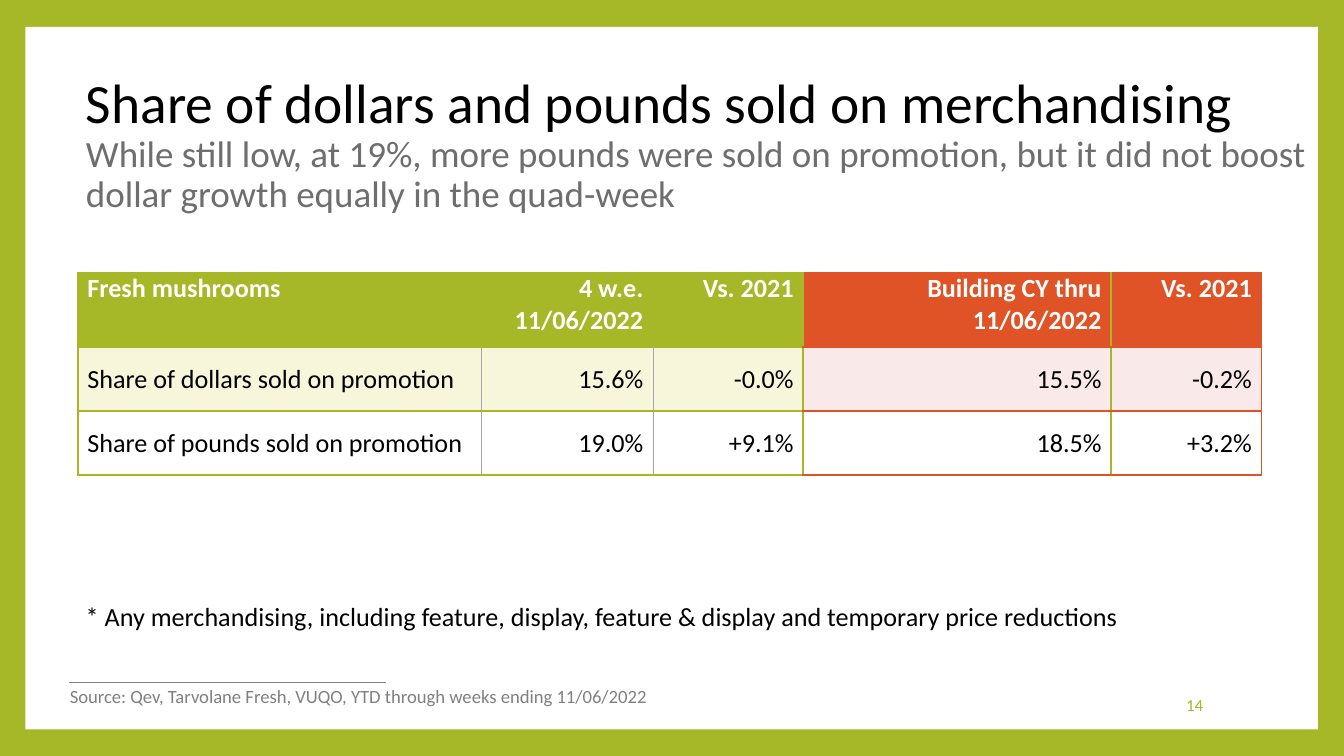
from dataclasses import dataclass

from lxml import etree
from pptx import Presentation
from pptx import util as u
from pptx.dml.color import RGBColor
from pptx.enum import shapes, text
from pptx.oxml.ns import qn


@dataclass(frozen=True)
class Theme:
    font: str = "Calibri"
    green: str = "A6B727"
    orange: str = "DF5327"
    pale_green: str = "F7F6DA"
    pale_orange: str = "F9E9E8"
    white: str = "FFFFFF"
    black: str = "000000"
    subtitle: str = "6E6E6E"
    grey: str = "808080"
    divider: str = "A6A6A6"
    title_size: float = 29.7
    subtitle_size: float = 19.8
    body_size: float = 14
    source_size: float = 10
    number_size: float = 9


theme = Theme()
LEFT, RIGHT = text.PP_ALIGN.LEFT, text.PP_ALIGN.RIGHT
TOP, MIDDLE = text.MSO_ANCHOR.TOP, text.MSO_ANCHOR.MIDDLE


def write(paragraph, content, size=theme.body_size, color=theme.black, bold=False, align=LEFT):
    paragraph.alignment = align
    run = paragraph.add_run()
    run.text = content
    run.font.name = theme.font
    run.font.size = u.Pt(size)
    run.font.bold = bold
    run.font.color.rgb = RGBColor.from_string(color)


def add_border(cell, side, color, width):
    """Draw one cell edge; side is L, R, T or B, in that order."""
    line = etree.SubElement(cell._tc.get_or_add_tcPr(), qn(f"a:ln{side}"), w=str(u.Pt(width)))
    fill = etree.SubElement(line, qn("a:solidFill"))
    etree.SubElement(fill, qn("a:srgbClr"), val=color)


presentation = Presentation()
presentation.slide_width = u.Cm(25.4)
presentation.slide_height = u.Cm(14.29)
slide = presentation.slides.add_slide(presentation.slide_layouts[5])

# Green frame around a white panel
slide.background.fill.solid()
slide.background.fill.fore_color.rgb = RGBColor.from_string(theme.green)
panel = slide.shapes.add_shape(
    shapes.MSO_SHAPE.RECTANGLE, u.Cm(0.48), u.Cm(0.51), u.Cm(24.43), u.Cm(13.28))
panel.shadow.inherit = False
panel.fill.solid()
panel.fill.fore_color.rgb = RGBColor.from_string(theme.white)
panel.line.fill.background()

# Title and subtitle share the placeholder, which must lie above the panel
title = slide.shapes.title
panel._element.addnext(title._element)
title.left, title.top, title.width, title.height = u.Cm(1.37), u.Cm(1.37), u.Cm(23.6), u.Cm(2.77)
title.text_frame.word_wrap = True
title.text_frame.auto_size = text.MSO_AUTO_SIZE.NONE
title.text_frame.vertical_anchor = MIDDLE
heading = title.text_frame.paragraphs[0]
heading.line_spacing = 0.9
write(heading, "Share of dollars and pounds sold on merchandising", size=theme.title_size)
heading.add_line_break()
write(heading, "While still low, at 19%, more pounds were sold on promotion, "
      "but it did not boost dollar growth equally in the quad-week",
      size=theme.subtitle_size, color=theme.subtitle)

# Share table: green columns for the quad-week, orange for the year to date
rows = [
    ["Fresh mushrooms", "4 w.e. 11/06/2022", "Vs. 2021", "Building CY thru 11/06/2022", "Vs. 2021"],
    ["Share of dollars sold on promotion", "15.6%", "-0.0%", "15.5%", "-0.2%"],
    ["Share of pounds sold on promotion", "19.0%", "+9.1%", "18.5%", "+3.2%"],
]
column_widths = [7.62, 3.25, 2.84, 5.82, 2.84]
row_heights = [1.4, 1.21, 1.21]
green_fills = [theme.green, theme.pale_green, theme.white]
orange_fills = [theme.orange, theme.pale_orange, theme.white]
first_orange, last_column = 3, len(column_widths) - 1

table = slide.shapes.add_table(
    len(rows), len(column_widths), u.Cm(1.47), u.Cm(5.16),
    u.Cm(sum(column_widths)), u.Cm(sum(row_heights))).table
for column, width in zip(table.columns, column_widths):
    column.width = u.Cm(width)
for row, height in zip(table.rows, row_heights):
    row.height = u.Cm(height)

for r, values in enumerate(rows):
    for c, value in enumerate(values):
        cell = table.cell(r, c)
        header, orange = r == 0, c >= first_orange
        edge = theme.orange if orange else theme.green
        for side, boundary in (("L", c), ("R", c + 1)):
            if not header and 0 < boundary < first_orange:
                add_border(cell, side, theme.divider, 0.5)
            else:
                add_border(cell, side, theme.orange if boundary > last_column else theme.green, 1)
        for side in "TB":
            add_border(cell, side, edge, 1)
        cell.fill.solid()
        cell.fill.fore_color.rgb = RGBColor.from_string((orange_fills if orange else green_fills)[r])
        cell.margin_left = cell.margin_right = u.Cm(0.18)
        cell.margin_top = cell.margin_bottom = 0
        cell.vertical_anchor = TOP if header else MIDDLE
        write(cell.text_frame.paragraphs[0], value, bold=header,
              color=theme.white if header else theme.black, align=RIGHT if c else LEFT)

# Footnote, source and page number
source_rule = slide.shapes.add_connector(
    shapes.MSO_CONNECTOR.STRAIGHT, u.Cm(1.3), u.Cm(12.9), u.Cm(7.29), u.Cm(12.9))
source_rule.line.color.rgb = RGBColor.from_string(theme.grey)
source_rule.line.width = u.Pt(0.79)
etree.SubElement(source_rule._element.spPr, qn("a:effectLst"))

notes = [
    ("* Any merchandising, including feature, display, feature & display and temporary price reductions",
     (1.37, 11.23, 20.57, 0.86), TOP, {}),
    ("Source: Qev, Tarvolane Fresh, VUQO, YTD through weeks ending 11/06/2022",
     (1.07, 12.83, 11.68, 0.69), TOP, {"size": theme.source_size, "color": theme.grey}),
    ("14", (19.43, 12.95, 3.56, 0.76), MIDDLE,
     {"size": theme.number_size, "color": theme.green, "align": RIGHT}),
]
for content, place, anchor, text_format in notes:
    box = slide.shapes.add_textbox(*(u.Cm(length) for length in place))
    box.text_frame.word_wrap = False
    box.text_frame.vertical_anchor = anchor
    # A fixed width keeps the right-aligned number at its edge
    if text_format.get("align") == RIGHT:
        box.text_frame.word_wrap = True
    write(box.text_frame.paragraphs[0], content, **text_format)

presentation.save("out.pptx")
